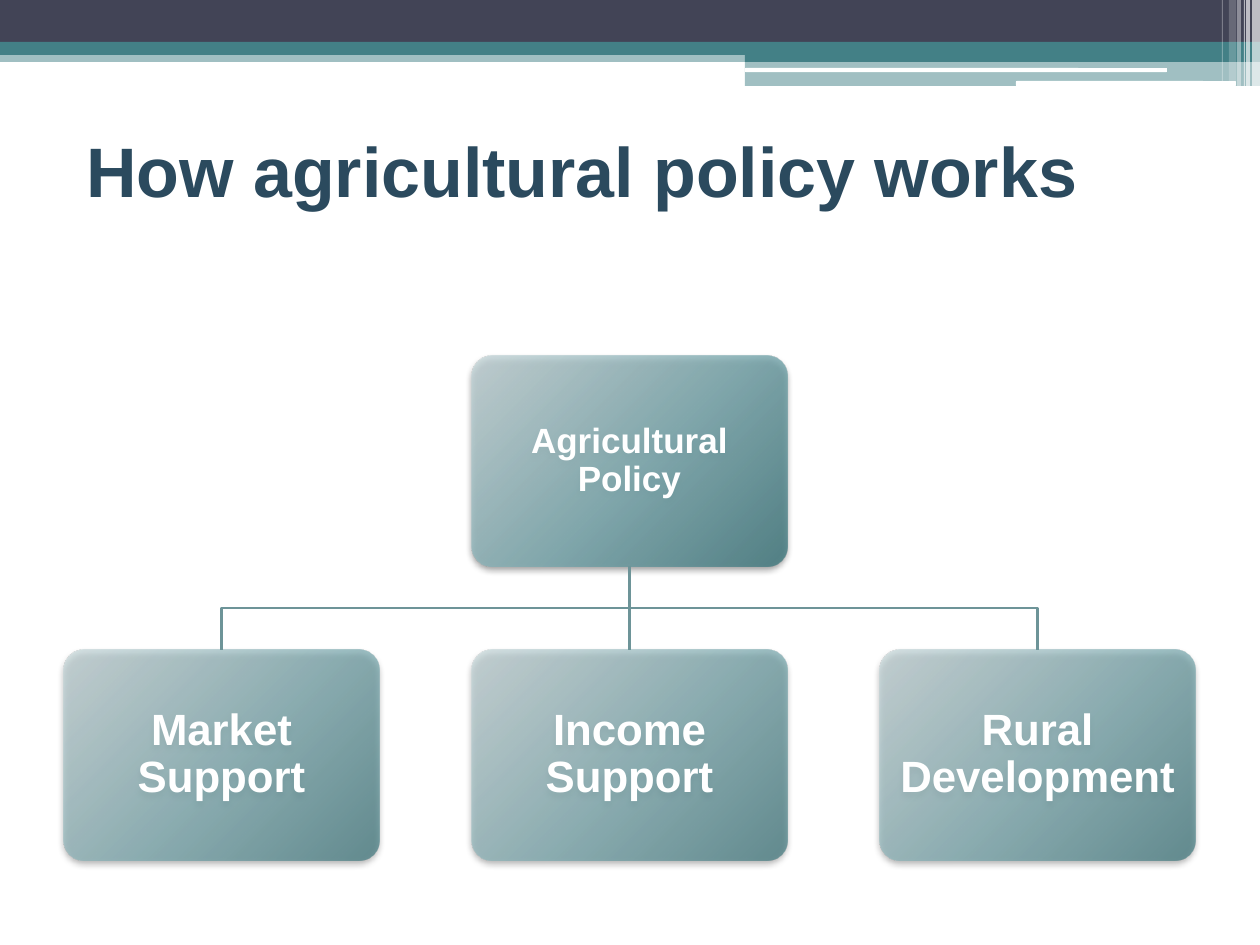
from lxml import etree
from pptx import Presentation
from pptx.dml.color import RGBColor
from pptx.enum.shapes import MSO_CONNECTOR, MSO_SHAPE
from pptx.enum.text import MSO_ANCHOR, PP_ALIGN
from pptx.oxml import parse_xml
from pptx.oxml.ns import nsdecls, qn
from pptx.util import Pt

RECT, ROUND = MSO_SHAPE.RECTANGLE, MSO_SHAPE.ROUNDED_RECTANGLE
STRAIGHT = MSO_CONNECTOR.STRAIGHT
MIDDLE = MSO_ANCHOR.MIDDLE
LEFT, CENTER = PP_ALIGN.LEFT, PP_ALIGN.CENTER
BOTTOM, TOP = 2, 0

WHITE = RGBColor(0xFF, 0xFF, 0xFF)
DARK = RGBColor(0x42, 0x44, 0x56)
TEAL = RGBColor(0x43, 0x80, 0x86)
NAVY = RGBColor(0x2B, 0x4A, 0x5E)
LINE = RGBColor(0x6D, 0x94, 0x98)
PALE = RGBColor(0xC7, 0xD7, 0xDA)
MID = RGBColor(0x77, 0xA7, 0xAD)
DEEP = RGBColor(0x3E, 0x77, 0x7D)
STOPS = [(0, PALE), (55, MID), (100, DEEP)]

BOX_W, BOX_H = 315, 210
ROOT_X, ROOT_Y = 472, 356
ROW_X, ROW_Y, STEP = 64, 650, 408

# left, top, width, height, colour, opacity in percent
BANDS = [
    (0, 50, 1260, 12, TEAL, 50),
    (0, 0, 1260, 43, DARK, 100),
    (0, 42, 1260, 13, TEAL, 100),
    (745, 49, 515, 13, TEAL, 100),
    (745, 62, 515, 24, TEAL, 50),
]
BARS = [(745, 68, 422, 4), (1016, 81, 220, 5)]
# left, width, height, opacity in percent
STRIPES = [
    (1252, 8, 86, 65), (1246, 4, 86, 65), (1244, 1, 86, 60),
    (1237, 4, 86, 40), (1229, 7, 81, 20), (1222, 1, 81, 30),
]


def px(n):
    return round(n * 914400 / 126)


def style(obj, **values):
    for name, value in values.items():
        setattr(obj, name, value)


def block(slide, kind, x, y, w, h, color, alpha=100):
    """Plain filled shape without outline or shadow."""
    shape = slide.shapes.add_shape(kind, px(x), px(y), px(w), px(h))
    shape.shadow.inherit = False
    shape.line.fill.background()
    shape.fill.solid()
    shape.fill.fore_color.rgb = color
    if alpha < 100:
        tint = shape.fill._xPr.find(".//" + qn("a:srgbClr"))
        etree.SubElement(tint, qn("a:alpha"), val=str(alpha * 1000))
    return shape


def write(shape, text, size, color, align, inset=None, **para):
    frame = shape.text_frame
    style(frame, word_wrap=True, vertical_anchor=MIDDLE)
    if inset is not None:
        for side in ("left", "top", "right", "bottom"):
            setattr(frame, "margin_" + side, px(inset))
    line = frame.paragraphs[0]
    style(line, alignment=align, **para)
    run = line.add_run()
    run.text = text
    style(run.font, name="Arial", size=Pt(size), bold=True)
    run.font.color.rgb = color


def shade(shape, alpha, dim):
    """Radial see-through gradient with a soft shadow below."""
    stops = "".join(
        f'<a:gs pos="{pos * 1000}"><a:srgbClr val="{color}">'
        f'<a:alpha val="{alpha * 1000}"/></a:srgbClr></a:gs>'
        for pos, color in STOPS)
    grad = parse_xml(
        f'<a:gradFill {nsdecls("a")} rotWithShape="1"><a:gsLst>{stops}</a:gsLst>'
        '<a:path path="circle"><a:fillToRect l="-40000" t="-90000" '
        'r="140000" b="190000"/></a:path></a:gradFill>')
    glow = parse_xml(
        f'<a:outerShdw {nsdecls("a")} blurRad="{Pt(4)}" dist="{Pt(2)}" '
        'dir="5400000" rotWithShape="0"><a:srgbClr val="000000">'
        f'<a:alpha val="{dim * 1000}"/></a:srgbClr></a:outerShdw>')
    props = shape._element.spPr
    props.replace(props.find(qn("a:solidFill")), grad)
    props.find(qn("a:effectLst")).append(glow)


def node(slide, x, y, text, size, alpha, dim):
    shape = block(slide, ROUND, x, y, BOX_W, BOX_H, PALE)
    shape.adjustments[0] = 0.1
    shade(shape, alpha, dim)
    write(shape, text, size, WHITE, CENTER, 6, line_spacing=0.9)
    return shape


def ink(line):
    line.color.rgb = LINE
    line.width = Pt(1.5)


def link(slide, root, leaf):
    wire = slide.shapes.add_connector(STRAIGHT, 0, 0, 0, 0)
    wire.begin_connect(root, BOTTOM)
    wire.end_connect(leaf, TOP)
    ink(wire.line)
    etree.SubElement(wire._element.spPr, qn("a:effectLst"))


def elbow(slide, root, leaf):
    """Line down from root, across, and down to leaf."""
    start = root.left + root.width // 2
    end = leaf.left + leaf.width // 2
    top = root.top + root.height
    mid = (top + leaf.top) // 2
    path = slide.shapes.build_freeform(start, top)
    path.add_line_segments(
        [(start, mid), (end, mid), (end, leaf.top)], close=False)
    wire = path.convert_to_shape()
    wire.fill.background()
    wire.shadow.inherit = False
    ink(wire.line)


def banner(slide):
    for band in BANDS:
        block(slide, RECT, *band)
    for bar in BARS:
        block(slide, ROUND, *bar, WHITE)
    for x, w, h, alpha in STRIPES:
        block(slide, RECT, x, 0, w, h, WHITE, alpha)


def main():
    deck = Presentation()
    style(deck, slide_width=px(1260), slide_height=px(945))
    slide = deck.slides.add_slide(deck.slide_layouts[6])
    banner(slide)
    title = slide.shapes.add_textbox(px(74), px(96), px(1134), px(147))
    write(title, "How agricultural policy works", 40, NAVY, LEFT)

    root = node(slide, ROOT_X, ROOT_Y, "Agricultural Policy", 20, 80, 45)
    names = ["Market Support", "Income Support", "Rural Development"]
    leaves = [node(slide, ROW_X + i * STEP, ROW_Y, name, 25, 70, 40)
              for i, name in enumerate(names)]
    for leaf in leaves:
        join = link if leaf.left == root.left else elbow
        join(slide, root, leaf)
    deck.save("out.pptx")


if __name__ == "__main__":
    main()
